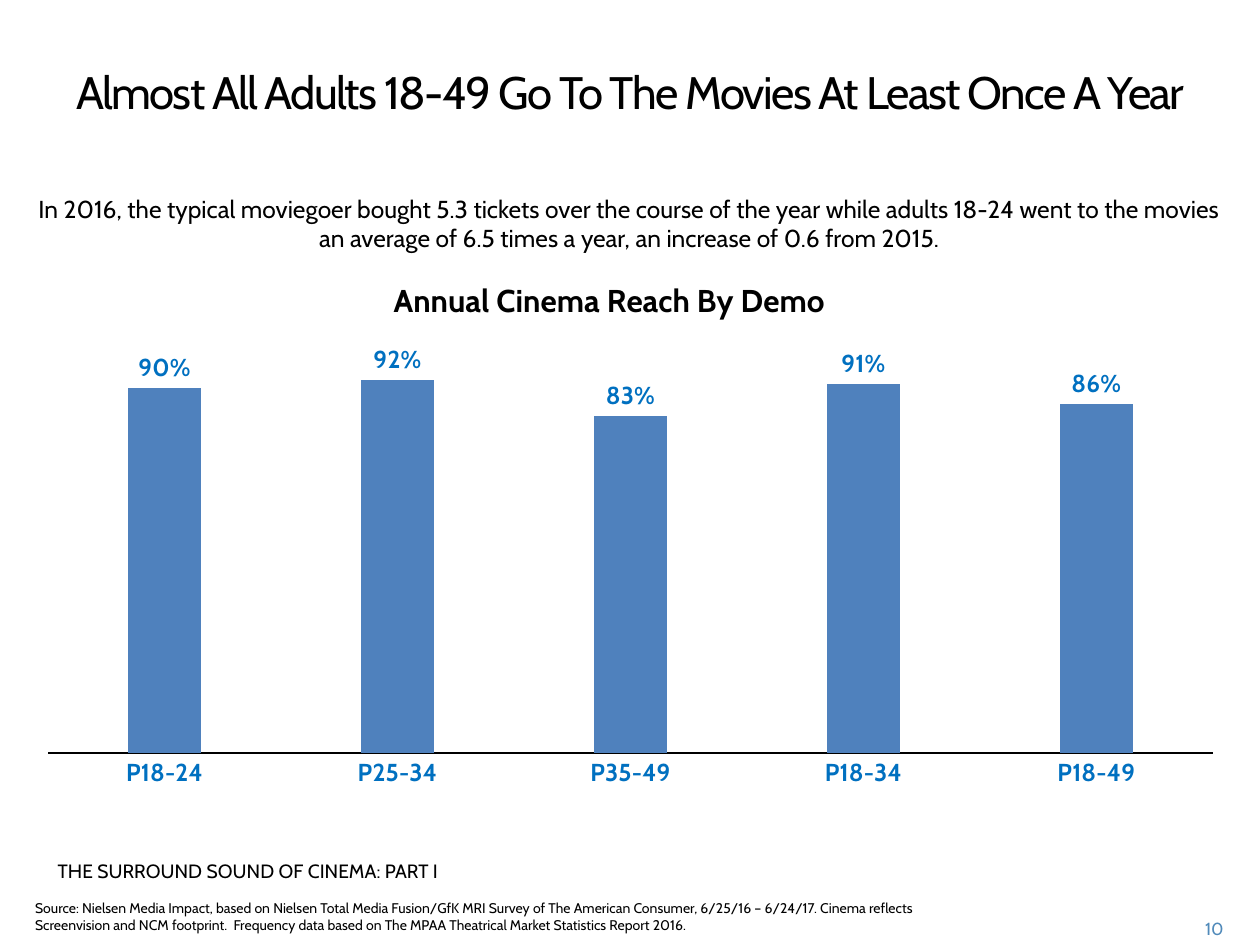
from dataclasses import dataclass
from lxml.etree import SubElement
from pptx import Presentation
from pptx.chart.data import CategoryChartData
from pptx.dml.color import RGBColor
from pptx.enum.chart import XL_CHART_TYPE, XL_LABEL_POSITION, XL_TICK_MARK
from pptx.enum.text import MSO_ANCHOR, PP_ALIGN
from pptx.oxml.ns import qn
from pptx.util import Inches, Pt

FONT = "Cabin"
COLORS = {"text": "000000", "label": "0070C0", "bar": "4F81BD", "page": "508ABA"}
REACH = {"P18-24": 0.9, "P25-34": 0.92, "P35-49": 0.83, "P18-34": 0.91, "P18-49": 0.86}


@dataclass
class Box:
    left: float
    top: float
    width: float
    height: float

    def place(self) -> tuple:
        """Return the box as lengths."""
        return tuple(Inches(v) for v in (self.left, self.top, self.width, self.height))


def color(name: str) -> RGBColor:
    """Look up a colour by name."""
    return RGBColor.from_string(COLORS[name])


def style(font, size: float, name: str = "text", bold: bool = False) -> None:
    """Set face, size, colour and weight."""
    font.name, font.size, font.bold = FONT, Pt(size), bold
    font.color.rgb = color(name)


def write(slide, box: Box, text: str, *, size: float, name: str = "text",
          align=PP_ALIGN.LEFT, anchor=MSO_ANCHOR.TOP, line=None, track: int = 0) -> None:
    """Add a wrapped text box."""
    frame = slide.shapes.add_textbox(*box.place()).text_frame
    frame.word_wrap = True
    frame.vertical_anchor = anchor
    para = frame.paragraphs[0]
    para.alignment = align
    if line:
        para.line_spacing = Pt(line)
    run = para.add_run()
    run.text = text
    style(run.font, size, name)
    if track:
        run.font._element.set("spc", str(track))


def arrange(part, inner: bool = False, **spots: float) -> None:
    """Fix a chart part at fractions of the chart."""
    layout = part.get_or_add_layout() if hasattr(part, "get_or_add_layout") else part.find(qn("c:layout"))
    if layout is None:
        layout = SubElement(part, qn("c:layout"))
        part.insert(0, layout)
    manual = SubElement(layout, qn("c:manualLayout"))
    rules = {"layoutTarget": "inner"} if inner else {}
    rules |= {"xMode": "edge", "yMode": "edge"} | spots
    for tag, value in rules.items():
        SubElement(manual, qn(f"c:{tag}")).set("val", str(value))


def draw_chart(slide, box: Box) -> None:
    """Draw the reach columns."""
    data = CategoryChartData(number_format="0%")
    data.categories = list(REACH)
    data.add_series("Series 1", list(REACH.values()))
    kind = XL_CHART_TYPE.COLUMN_CLUSTERED
    chart = slide.shapes.add_chart(kind, *box.place(), data).chart
    style(chart.font, 10)
    chart.has_legend = False
    chart.has_title = True
    title = chart.chart_title
    run = title.text_frame.paragraphs[0].add_run()
    run.text = "Annual Cinema Reach By Demo"
    style(run.font, 18, bold=True)
    title.include_in_layout = False
    arrange(title._element, x=0.3, y=0.01)
    arrange(chart._chartSpace.chart.plotArea, True, x=0.02, y=0.15, w=0.96, h=0.76)

    values = chart.value_axis
    values.minimum_scale, values.maximum_scale = 0, 1
    values.has_major_gridlines = False
    values.visible = False
    groups = chart.category_axis
    groups.major_tick_mark = groups.minor_tick_mark = XL_TICK_MARK.NONE
    groups.format.line.color.rgb = color("text")
    groups.format.line.width = Pt(0.75)
    style(groups.tick_labels.font, 14, "label", True)

    plot = chart.plots[0]
    plot.gap_width, plot.overlap = 219, -27
    plot.vary_by_categories = False
    fill = plot.series[0].format.fill
    fill.solid()
    fill.fore_color.rgb = color("bar")
    plot.has_data_labels = True
    labels = plot.data_labels
    labels.show_value = True
    labels.number_format, labels.number_format_is_linked = "0%", False
    labels.position = XL_LABEL_POSITION.OUTSIDE_END
    style(labels.font, 14, "label", True)


def main() -> None:
    """Build and save the slide."""
    deck = Presentation()
    deck.slide_width, deck.slide_height = Inches(10), Inches(7.5)
    slide = deck.slides.add_slide(deck.slide_layouts[6])
    write(slide, Box(9.2, 7.24, 0.61, 0.25), "10", size=10, name="page",
          align=PP_ALIGN.RIGHT, anchor=MSO_ANCHOR.MIDDLE)
    write(slide, Box(0.33, 0.5, 9.35, 0.76),
          "Almost All Adults 18-49 Go To The Movies At Least Once A Year",
          size=26, align=PP_ALIGN.CENTER, line=28, track=-100)
    draw_chart(slide, Box(0.19, 2.12, 9.63, 4.24))
    write(slide, Box(0.18, 7.09, 7.72, 0.34),
          "Source: Nielsen Media Impact, based on Nielsen Total Media Fusion/GfK MRI Survey of "
          "The American Consumer, 6/25/16 – 6/24/17. Cinema reflects Screenvision and NCM "
          "footprint.  Frequency data based on The MPAA Theatrical Market Statistics Report 2016.",
          size=8)
    write(slide, Box(0.18, 1.49, 9.63, 0.57),
          "In 2016, the typical moviegoer bought 5.3 tickets over the course of the year while "
          "adults 18-24 went to the movies an average of 6.5 times a year, an increase of 0.6 "
          "from 2015.", size=14, align=PP_ALIGN.CENTER)
    write(slide, Box(0.36, 6.77, 3.67, 0.47), "THE SURROUND SOUND OF CINEMA: PART I", size=11)
    deck.save("out.pptx")


if __name__ == "__main__":
    main()
